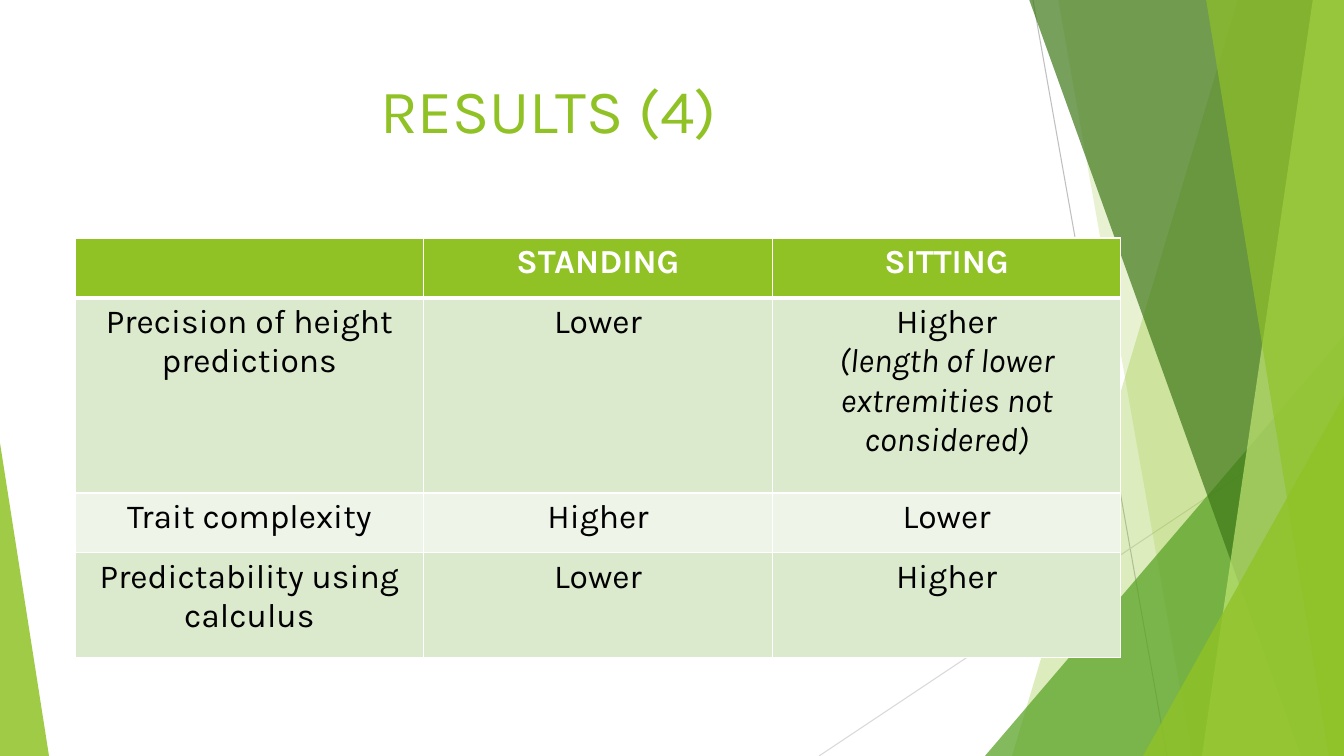
"""Build the results slide: a comparison table beside green facets."""
from lxml.etree import SubElement
from pptx import Presentation
from pptx.dml.color import RGBColor
from pptx.enum.shapes import MSO_CONNECTOR, MSO_SHAPE
from pptx.enum.text import MSO_ANCHOR, PP_ALIGN
from pptx.oxml.ns import qn
from pptx.util import Pt

SCALE = 914400 / 100.8
WIDTH, HEIGHT = 1344, 756
GREEN = RGBColor(0x90, 0xC2, 0x26)
MID_GREEN = RGBColor(0x54, 0xA0, 0x21)
DARK_GREEN = RGBColor(0x3F, 0x78, 0x19)
LIGHT_GREEN = RGBColor(0xC0, 0xE4, 0x74)
ODD_ROW = RGBColor(0xDB, 0xE9, 0xCD)
EVEN_ROW = RGBColor(0xEE, 0xF4, 0xE8)
GREY = RGBColor(0xBF, 0xBF, 0xBF)
PALE_GREY = RGBColor(0xD9, 0xD9, 0xD9)
WHITE = RGBColor(0xFF, 0xFF, 0xFF)
BLACK = RGBColor(0, 0, 0)


def emu(*pixels):
    return [round(pixel * SCALE) for pixel in pixels]


def write(paragraph, text, color, **formats):
    paragraph.alignment = PP_ALIGN.CENTER
    run = paragraph.add_run()
    run.text = text
    run.font.color.rgb = color
    for name, value in {"name": "Karla", "size": Pt(24), **formats}.items():
        setattr(run.font, name, value)


presentation = Presentation()
presentation.slide_width, presentation.slide_height = emu(WIDTH, HEIGHT)
slide = presentation.slides.add_slide(presentation.slide_layouts[6])

for ends, color in [((1033, 0, 1167, 756), GREY), ((1344, 406, 819, 756), PALE_GREY)]:
    connector = slide.shapes.add_connector(MSO_CONNECTOR.STRAIGHT, *emu(*ends))
    connector.line.color.rgb = color
    connector.line.width = Pt(0.75)
    SubElement(connector.element.spPr, qn("a:effectLst"))

facets = [
    ("band", (1238, 1012), GREEN, 30),
    ("band", (1058, 1192), GREEN, 20),
    ("triangle", (985, 336, 359, 420), MID_GREEN, 72),
    ("band", (1029, 1301), DARK_GREEN, 70),
    ("band", (1313, 1202), LIGHT_GREEN, 70),
    ("band", (1206, 1329), GREEN, 65),
    ("triangle", (1143, 396, 201, 360), GREEN, 80),
    ("triangle", (0, 443, 49, 313), GREEN, 85),
]
for kind, place, color, opacity in facets:
    if kind == "band":
        top_left, bottom_left = place
        builder = slide.shapes.build_freeform(top_left, -1, scale=SCALE)
        builder.add_line_segments([(WIDTH, -1), (WIDTH, HEIGHT), (bottom_left, HEIGHT)])
        shape = builder.convert_to_shape()
    else:
        shape = slide.shapes.add_shape(MSO_SHAPE.ISOSCELES_TRIANGLE, *emu(*place))
        shape.adjustments[0] = 1 if place[0] else 0
    shape.shadow.inherit = False
    shape.fill.solid()
    shape.fill.fore_color.rgb = color
    shape.line.fill.background()
    fill_color = shape.element.spPr.find(qn("a:solidFill")).find(qn("a:srgbClr"))
    SubElement(fill_color, qn("a:alpha"), val=str(opacity * 1000))

title = slide.shapes.add_textbox(*emu(75, 67, 947, 145))
title.text_frame.word_wrap = True
title.text_frame.vertical_anchor = MSO_ANCHOR.TOP
write(title.text_frame.paragraphs[0], "RESULTS (4)", GREEN, size=Pt(44))

row_heights = [60, 195, 60, 105]
row_fills = [GREEN, ODD_ROW, EVEN_ROW, ODD_ROW]
rows = [
    ["", "STANDING", "SITTING"],
    ["Precision of height predictions", "Lower",
     "Higher\n(length of lower extremities not considered)"],
    ["Trait complexity", "Higher", "Lower"],
    ["Predictability using calculus", "Lower", "Higher"],
]
table = slide.shapes.add_table(4, 3, *emu(75, 238, 1046, sum(row_heights))).table
table.horz_banding = False
for column in table.columns:
    column.width = round(1046 * SCALE / 3)

for row_index, texts in enumerate(rows):
    table.rows[row_index].height = emu(row_heights[row_index])[0]
    header = row_index == 0
    for column_index, text in enumerate(texts):
        cell = table.cell(row_index, column_index)
        properties = cell._tc.get_or_add_tcPr()
        for side in "LRTB":
            thick = (row_index, side) in [(0, "B"), (1, "T")]
            border = SubElement(properties, qn(f"a:ln{side}"), w=str(Pt(3 if thick else 1)))
            border_fill = SubElement(border, qn("a:solidFill"))
            SubElement(border_fill, qn("a:srgbClr"), val=str(WHITE))
        cell.fill.solid()
        cell.fill.fore_color.rgb = row_fills[row_index]
        for line_index, line in enumerate(text.split("\n") if text else []):
            frame = cell.text_frame
            paragraph = frame.add_paragraph() if line_index else frame.paragraphs[0]
            write(paragraph, line, WHITE if header else BLACK,
                  bold=header, italic=line_index > 0)

presentation.save("out.pptx")
